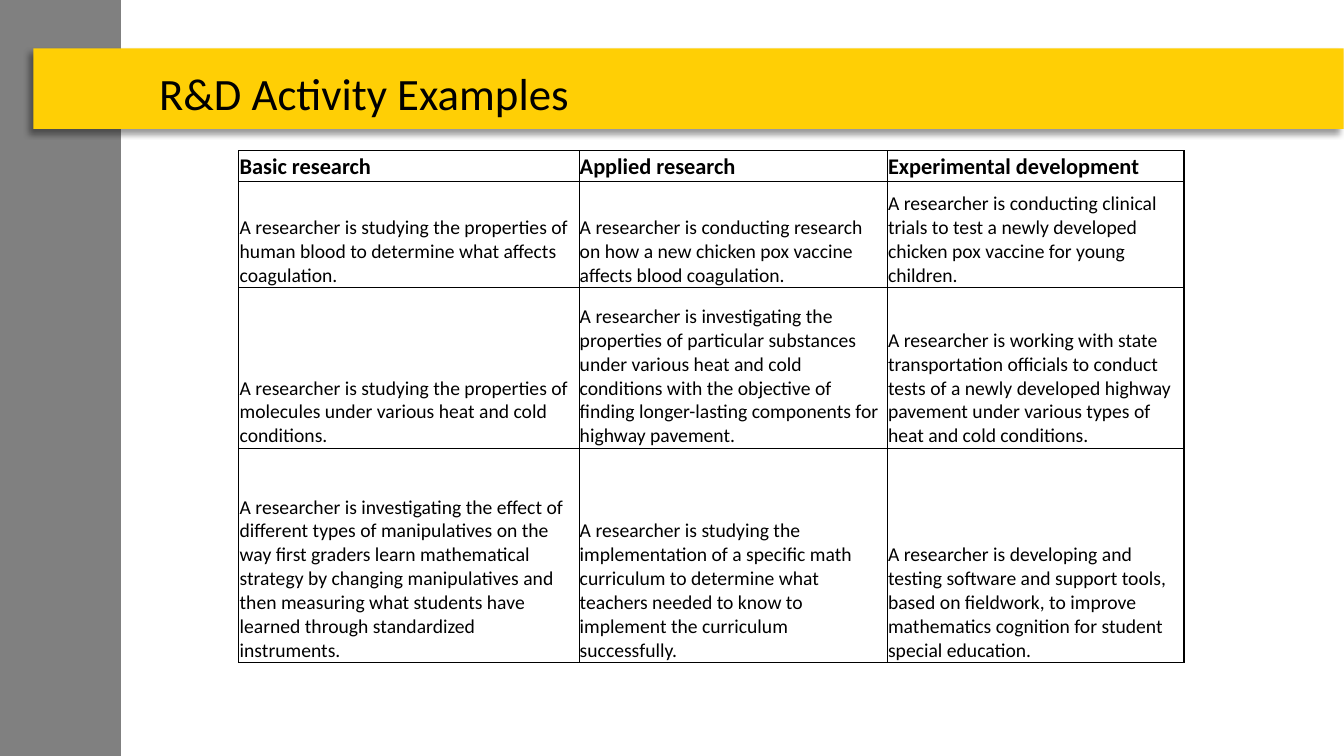
from dataclasses import dataclass

from lxml.etree import SubElement
from pptx import Presentation
from pptx.dml.color import RGBColor
from pptx.enum.shapes import MSO_SHAPE
from pptx.enum.text import MSO_ANCHOR, MSO_AUTO_SIZE
from pptx.oxml.ns import qn
from pptx.shapes.autoshape import Shape
from pptx.slide import Slide
from pptx.table import _Cell
from pptx.text.text import TextFrame
from pptx.util import Cm, Pt

BLACK = RGBColor(0x00, 0x00, 0x00)
GRAY = RGBColor(0x80, 0x80, 0x80)
YELLOW = RGBColor(0xFF, 0xCF, 0x05)
FONT = "Calibri"
THIN, THICK = 0.5, 1.0


@dataclass(frozen=True)
class Band:
    left: float
    top: float
    width: float
    height: float
    color: RGBColor
    shadow: bool = False


@dataclass(frozen=True)
class Column:
    heading: str
    width: float
    examples: tuple[str, ...]


BANDS = (
    Band(0, 0, 3.05, 19.05, GRAY),
    Band(0.84, 1.22, 33.02, 2.03, YELLOW, shadow=True),
)
ROW_HEIGHTS = (0.77, 2.69, 4.04, 5.4)
COLUMNS = (
    Column("Basic research", 8.57, (
        "A researcher is studying the properties of human blood to determine "
        "what affects coagulation.",
        "A researcher is studying the properties of molecules under various "
        "heat and cold conditions.",
        "A researcher is investigating the effect of different types of "
        "manipulatives on the way first graders learn mathematical strategy by "
        "changing manipulatives and then measuring what students have learned "
        "through standardized instruments.",
    )),
    Column("Applied research", 7.77, (
        "A researcher is conducting research on how a new chicken pox vaccine "
        "affects blood coagulation.",
        "A researcher is investigating the properties of particular substances "
        "under various heat and cold conditions with the objective of finding "
        "longer-lasting components for highway pavement.",
        "A researcher is studying the implementation of a specific math "
        "curriculum to determine what teachers needed to know to implement the "
        "curriculum successfully.",
    )),
    Column("Experimental development", 7.48, (
        "A researcher is conducting clinical trials to test a newly developed "
        "chicken pox vaccine for young children.",
        "A researcher is working with state transportation officials to conduct "
        "tests of a newly developed highway pavement under various types of "
        "heat and cold conditions.",
        "A researcher is developing and testing software and support tools, "
        "based on fieldwork, to improve mathematics cognition for student "
        "special education.",
    )),
)


def write_text(frame: TextFrame, text: str, *, size: float, bold: bool = False) -> None:
    span = frame.paragraphs[0].add_run()
    span.text = text
    span.font.name = FONT
    span.font.size = Pt(size)
    span.font.bold = bold
    span.font.color.rgb = BLACK


def add_shadow(shape: Shape) -> None:
    effects = shape.element.spPr.find(qn("a:effectLst"))
    shadow = SubElement(effects, qn("a:outerShdw"), blurRad=str(Pt(4)),
                        dist=str(Pt(5)), dir=str(135 * 60000), rotWithShape="0")
    color = SubElement(shadow, qn("a:srgbClr"), val=str(BLACK))
    SubElement(color, qn("a:alpha"), val="40000")


def draw_band(page: Slide, band: Band) -> None:
    shape = page.shapes.add_shape(MSO_SHAPE.RECTANGLE, Cm(band.left), Cm(band.top),
                                  Cm(band.width), Cm(band.height))
    shape.fill.solid()
    shape.fill.fore_color.rgb = band.color
    shape.line.fill.background()
    shape.shadow.inherit = False
    if band.shadow:
        add_shadow(shape)


def draw_title(page: Slide, text: str) -> None:
    box = page.shapes.add_textbox(Cm(3.76), Cm(1.52), Cm(15.16), Cm(1.63))
    frame = box.text_frame
    frame.word_wrap = True
    frame.auto_size = MSO_AUTO_SIZE.SHAPE_TO_FIT_TEXT
    write_text(frame, text, size=32)


def set_borders(cell: _Cell, widths: dict[str, float]) -> None:
    properties = cell._tc.get_or_add_tcPr()
    for side, width in widths.items():
        line = SubElement(properties, qn(f"a:ln{side}"), w=str(Pt(width)))
        fill = SubElement(line, qn("a:solidFill"))
        SubElement(fill, qn("a:srgbClr"), val=str(BLACK))


def draw_cell(cell: _Cell, text: str, *, heading: bool, borders: dict[str, float]) -> None:
    set_borders(cell, borders)
    cell.fill.background()
    cell.vertical_anchor = MSO_ANCHOR.BOTTOM
    cell.margin_left = cell.margin_right = cell.margin_top = Cm(0.02)
    cell.margin_bottom = 0
    write_text(cell.text_frame, text, size=16 if heading else 14, bold=heading)


def draw_table(page: Slide) -> None:
    width = sum(column.width for column in COLUMNS)
    table = page.shapes.add_table(len(ROW_HEIGHTS), len(COLUMNS), Cm(6.02), Cm(3.79),
                                  Cm(width), Cm(sum(ROW_HEIGHTS))).table
    table.first_row = False
    table.horz_banding = False
    for row, height in zip(table.rows, ROW_HEIGHTS):
        row.height = Cm(height)
    last_row, last_column = len(ROW_HEIGHTS) - 1, len(COLUMNS) - 1
    for column_index, column in enumerate(COLUMNS):
        table.columns[column_index].width = Cm(column.width)
        for row_index, text in enumerate((column.heading, *column.examples)):
            borders = {
                "L": THICK if column_index == 0 else THIN,
                "R": THICK if column_index == last_column else THIN,
                "T": THIN,
                "B": THICK if row_index == last_row else THIN,
            }
            draw_cell(table.cell(row_index, column_index), text,
                      heading=row_index == 0, borders=borders)


def main() -> None:
    deck = Presentation()
    deck.slide_width, deck.slide_height = Cm(33.87), Cm(19.05)
    page = deck.slides.add_slide(deck.slide_layouts[6])
    for band in BANDS:
        draw_band(page, band)
    draw_title(page, "R&D Activity Examples")
    draw_table(page)
    deck.save("out.pptx")


if __name__ == "__main__":
    main()
